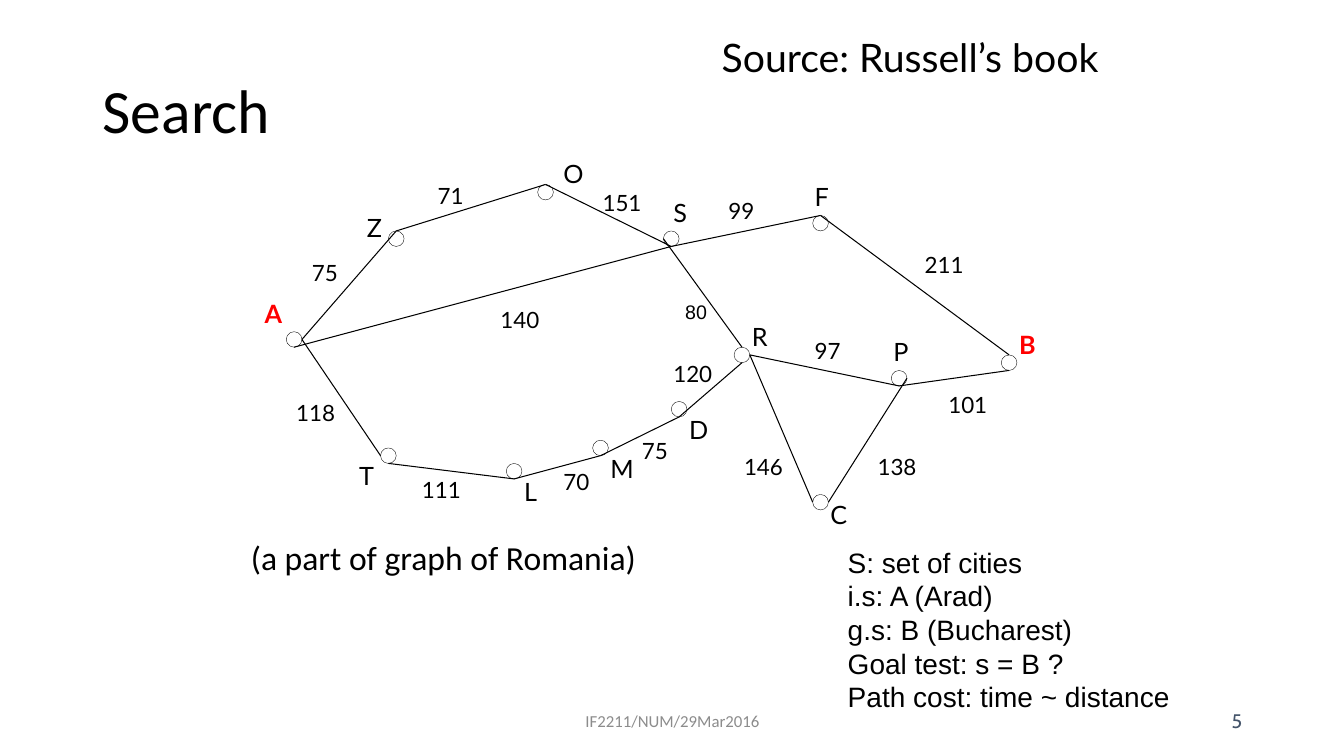
import pptx
import pptx.util
import pptx.dml.color
import pptx.enum.shapes
import pptx.enum.text
import pptx.oxml.ns
import lxml.etree

COLORS = {"ink": "000000", "goal": "FF0000", "number": "44546A", "footer": "8C8C8C"}
ALIGN = pptx.enum.text.PP_ALIGN
ANCHOR = pptx.enum.text.MSO_ANCHOR

presentation = pptx.Presentation()
presentation.slide_width = pptx.util.Inches(13.33)
presentation.slide_height = pptx.util.Inches(7.5)
slide = presentation.slides.add_slide(presentation.slide_layouts[6])

WIDTH, HEIGHT = presentation.slide_width, presentation.slide_height
GRAPH_LEFT, GRAPH_TOP = WIDTH * 0.213, HEIGHT * 0.244
COLUMN, ROW = WIDTH * 0.532 / 91, HEIGHT * 0.41 / 40


def grid_point(column, row):
    return round(GRAPH_LEFT + column * COLUMN), round(GRAPH_TOP + row * ROW)


def add_text(shapes, box, lines, size, font, color="ink", bold=False,
             align=ALIGN.LEFT, anchor=ANCHOR.TOP, wrap=True, spacing=None):
    shape = shapes.add_textbox(*(round(length) for length in box))
    frame = shape.text_frame
    frame.word_wrap = wrap
    frame.vertical_anchor = anchor
    for index, line in enumerate(lines):
        paragraph = frame.paragraphs[0] if index == 0 else frame.add_paragraph()
        paragraph.alignment = align
        paragraph.line_spacing = spacing
        run = paragraph.add_run()
        run.text = line
        run.font.size = pptx.util.Pt(size)
        run.font.name = font
        run.font.bold = bold
        run.font.color.rgb = pptx.dml.color.RGBColor.from_string(COLORS[color])


slide_texts = [
    ((70.67, 92.67, 22.5, 5.33), ["5"], 14, "Cabin",
     dict(color="number", align=ALIGN.RIGHT, anchor=ANCHOR.MIDDLE)),
    ((6.9, 5.33, 86.27, 19.33), ["Search"], 44, "Calibri",
     dict(anchor=ANCHOR.MIDDLE, spacing=0.9)),
    ((52.96, 3.73, 30.53, 7.6), ["Source: Russell’s book"], 28, "Lato", {}),
    ((62.34, 71.47, 29.11, 23.73),
     ["S: set of cities", "i.s: A (Arad)", "g.s: B (Bucharest)",
      "Goal test: s = B ?", "Path cost: time ~ distance"], 20, "Arial", {}),
    ((33.16, 92.67, 33.76, 5.33), ["IF2211/NUM/29Mar2016"], 12, "Calibri",
     dict(color="footer", align=ALIGN.CENTER, anchor=ANCHOR.MIDDLE)),
    ((17.93, 70.4, 30.38, 6.67), ["(a part of graph of Romania)"], 24, "Calibri",
     dict(wrap=False)),
]
for percents, lines, size, font, options in slide_texts:
    box = [percent * side / 100 for percent, side in zip(percents, (WIDTH, HEIGHT) * 2)]
    add_text(slide.shapes, box, lines, size, font, **options)

cities = {
    "A": (0, 19), "T": (12, 34), "R": (57, 21), "C": (67, 40), "P": (77, 24),
    "B": (91, 22), "F": (67, 4), "S": (48, 6), "O": (32, 0), "Z": (13, 6),
    "D": (49, 28), "M": (39, 33), "L": (28, 36),
}
label_offsets = {
    "A": (-4, -5), "T": (-4, 1), "R": (1, -4), "C": (1, 0), "P": (-1, -5),
    "B": (1, -4), "F": (-1, -5), "S": (0, -5), "O": (2, -4), "Z": (-4, -3),
    "D": (1, 1), "M": (1, 1), "L": (1, 1),
}
sides = {"top": (1, 0), "right": (2, 1), "bottom": (1, 2), "left": (0, 1)}
roads = [
    ("A", "right", "Z", "top"), ("Z", "top", "O", "top"),
    ("O", "top", "S", "bottom"), ("A", "bottom", "S", "bottom"),
    ("P", "bottom", "B", "bottom"), ("R", "right", "P", "bottom"),
    ("C", "right", "P", "right"), ("C", "left", "R", "right"),
    ("D", "bottom", "R", "bottom"), ("M", "bottom", "D", "bottom"),
    ("L", "bottom", "M", "bottom"), ("T", "left", "A", "right"),
    ("T", "bottom", "L", "bottom"), ("R", "top", "S", "left"),
    ("S", "bottom", "F", "top"), ("F", "top", "B", "top"),
]
distances = [
    ("118", 0, 27), ("111", 16, 37), ("75", 2, 9), ("71", 18, -1), ("151", 39, 0),
    ("99", 55, 1), ("97", 66, 19), ("120", 48, 22), ("146", 57, 34), ("138", 74, 34),
    ("101", 83, 26), ("211", 80, 8), ("75", 44, 32), ("70", 34, 36), ("140", 26, 15),
]

graph = slide.shapes.add_group_shape().shapes
ink = pptx.dml.color.RGBColor.from_string(COLORS["ink"])

for column, row in cities.values():
    circle = graph.add_shape(pptx.enum.shapes.MSO_SHAPE.OVAL, *grid_point(column, row),
                             round(2 * COLUMN), round(2 * ROW))
    circle.shadow.inherit = False
    circle.fill.background()
    circle.line.color.rgb = ink
    circle.line.width = pptx.util.Pt(0.25)

for start, start_side, end, end_side in roads:
    ends = []
    for city, side in ((start, start_side), (end, end_side)):
        ends += grid_point(cities[city][0] + sides[side][0], cities[city][1] + sides[side][1])
    road = graph.add_connector(pptx.enum.shapes.MSO_CONNECTOR.STRAIGHT, *ends)
    road.line.color.rgb = ink
    road.line.width = pptx.util.Pt(0.75)
    lxml.etree.SubElement(road._element.spPr, pptx.oxml.ns.qn("a:effectLst"))

for city, (column, row) in cities.items():
    across, down = label_offsets[city]
    endpoint = city in "AB"
    add_text(graph, (*grid_point(column + across, row + down), 6 * COLUMN, 5.2 * ROW),
             [city], 18, "Lato", "goal" if endpoint else "ink", endpoint)

for distance, column, row in distances:
    add_text(graph, (*grid_point(column, row), 8 * COLUMN, 4.8 * ROW), [distance], 16, "Lato")

add_text(graph, (*grid_point(49.5, 14.3), 5.4 * COLUMN, 4.3 * ROW), ["80"], 14, "Arial", wrap=False)

presentation.save("out.pptx")
